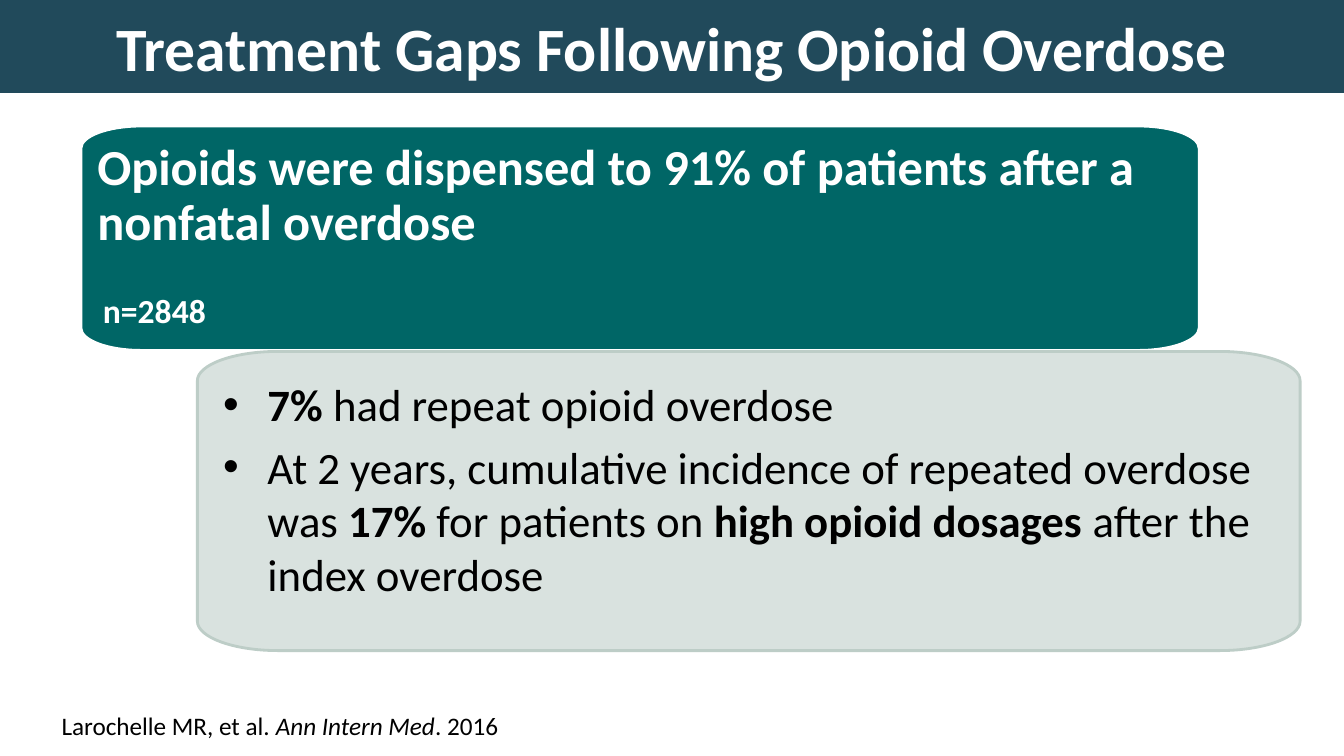
import lxml.etree
import pptx
import pptx.dml.color
import pptx.enum.text
import pptx.oxml.ns
import pptx.util

Pt = pptx.util.Pt
qn = pptx.oxml.ns.qn
MSO_ANCHOR = pptx.enum.text.MSO_ANCHOR
PP_ALIGN = pptx.enum.text.PP_ALIGN
COLORS = {"header": "214A5B", "banner": "006666", "panel": "D7E1DD",
          "panel_line": "BDCDC7", "white": "FFFFFF", "black": "000000"}
ARC = 0.55  # Bezier handle length for a quarter ellipse
rgb = pptx.dml.color.RGBColor.from_string


def add_spans(para, spans, size, color):
    """Add (text, style) spans; style is "bold", "italic" or ""."""
    for text, style in spans:
        span = para.add_run()
        span.text = text
        span.font.name = "Calibri"
        span.font.size = Pt(size)
        span.font.bold = style == "bold"
        span.font.italic = style == "italic"
        span.font.color.rgb = rgb(COLORS[color])


def add_oval_cornered(left, top, width, height, radius_x, radius_y, fill, line, margin):
    """Draw a text box whose four corners are quarter ellipses."""
    right, bottom = left + width, top + height
    points = [(left, top + radius_y), (left + radius_x, top),
              (right - radius_x, top), (right, top + radius_y),
              (right, bottom - radius_y), (right - radius_x, bottom),
              (left + radius_x, bottom), (left, bottom - radius_y)]
    builder = page.shapes.build_freeform(Pt(left), Pt(top + radius_y))
    builder.add_line_segments([(Pt(x), Pt(y)) for x, y in points[1:]], close=True)
    box = builder.convert_to_shape()

    # Turn each corner cut into one curve
    segments = list(box.element.iter(qn("a:lnTo")))
    for corner in range(4):
        start, end = points[2 * corner], points[2 * corner + 1]
        tip = (left if corner in (0, 3) else right, top if corner < 2 else bottom)
        curve = lxml.etree.Element(qn("a:cubicBezTo"))
        for anchor, share in ((start, ARC), (end, ARC), (end, 0)):
            x, y = [a + (t - a) * share for a, t in zip(anchor, tip)]
            lxml.etree.SubElement(curve, qn("a:pt"), x=str(Pt(x - left)), y=str(Pt(y - top)))
        segment = segments[2 * corner]
        segment.getparent().replace(segment, curve)

    box.shadow.inherit = False
    box.fill.solid()
    box.fill.fore_color.rgb = rgb(COLORS[fill])
    box.line.color.rgb = rgb(COLORS[line])
    box.line.width = Pt(2)
    frame = box.text_frame
    frame.word_wrap = True
    frame.vertical_anchor = MSO_ANCHOR.TOP
    frame.margin_left = frame.margin_top = Pt(margin)
    frame.margin_right = frame.margin_bottom = Pt(margin)
    return box


deck = pptx.Presentation()
deck.slide_width, deck.slide_height = Pt(960), Pt(540)
page = deck.slides.add_slide(deck.slide_layouts[5])

# Title bar
title = page.shapes.title
title.left, title.top, title.width, title.height = Pt(0), Pt(0), Pt(960), Pt(66.4)
title.fill.solid()
title.fill.fore_color.rgb = rgb(COLORS["header"])
title.text_frame.vertical_anchor = MSO_ANCHOR.MIDDLE
title.text_frame.auto_size = pptx.enum.text.MSO_AUTO_SIZE.NONE
heading = title.text_frame.paragraphs[0]
heading.alignment = PP_ALIGN.CENTER
add_spans(heading, [("Treatment Gaps Following Opioid Overdose", "bold")], 44, "white")

# Main finding banner
banner = add_oval_cornered(57.8, 90, 798.8, 160.3, 43, 16, "banner", "white", 11.7)
banner.text_frame.margin_bottom = Pt(62)
finding = banner.text_frame.paragraphs[0]
finding.alignment = PP_ALIGN.LEFT
finding.line_spacing = 0.9
add_spans(finding, [("Opioids were dispensed to 91% of patients after a nonfatal overdose",
                     "bold")], 36, "white")

# Detail panel, slightly transparent
panel = add_oval_cornered(141, 251, 787.7, 213.7, 57.6, 21, "panel", "panel_line", 18.4)
panel_color = panel.element.spPr.find(".//" + qn("a:srgbClr"))
lxml.etree.SubElement(panel_color, qn("a:alpha"), val="94000")

# Bullets in the panel
bullets = [
    [("7%", "bold"), (" had repeat opioid overdose", "")],
    [("At 2 years, cumulative incidence of repeated overdose was ", ""), ("17%", "bold"),
     (" for patients on ", ""), ("high opioid dosages ", "bold"),
     ("after the index overdose", "")],
]
frame = panel.text_frame
for index, spans in enumerate(bullets):
    para = frame.add_paragraph() if index else frame.paragraphs[0]
    para.level = 1
    para.alignment = PP_ALIGN.LEFT
    para.space_before = Pt(6)
    properties = para._p.get_or_add_pPr()
    properties.set("marL", str(Pt(31.7)))
    properties.set("indent", str(-Pt(31.7)))
    lxml.etree.SubElement(properties, qn("a:buFont"), typeface="Arial")
    lxml.etree.SubElement(properties, qn("a:buChar"), char="•")
    add_spans(para, spans, 32, "black")

# Citation and sample size
labels = [
    (36.9, 503.6, 330, 29, 18, "black",
     [("Larochelle MR, et al. ", ""), ("Ann Intern Med", "italic"), (". 2016", "")]),
    (66.5, 203.4, 88.6, 36, 24, "white", [("n=2848", "bold")]),
]
for left, top, width, height, size, color, spans in labels:
    label = page.shapes.add_textbox(Pt(left), Pt(top), Pt(width), Pt(height))
    label.text_frame.word_wrap = False
    label.text_frame.auto_size = pptx.enum.text.MSO_AUTO_SIZE.SHAPE_TO_FIT_TEXT
    add_spans(label.text_frame.paragraphs[0], spans, size, color)

deck.save("out.pptx")
